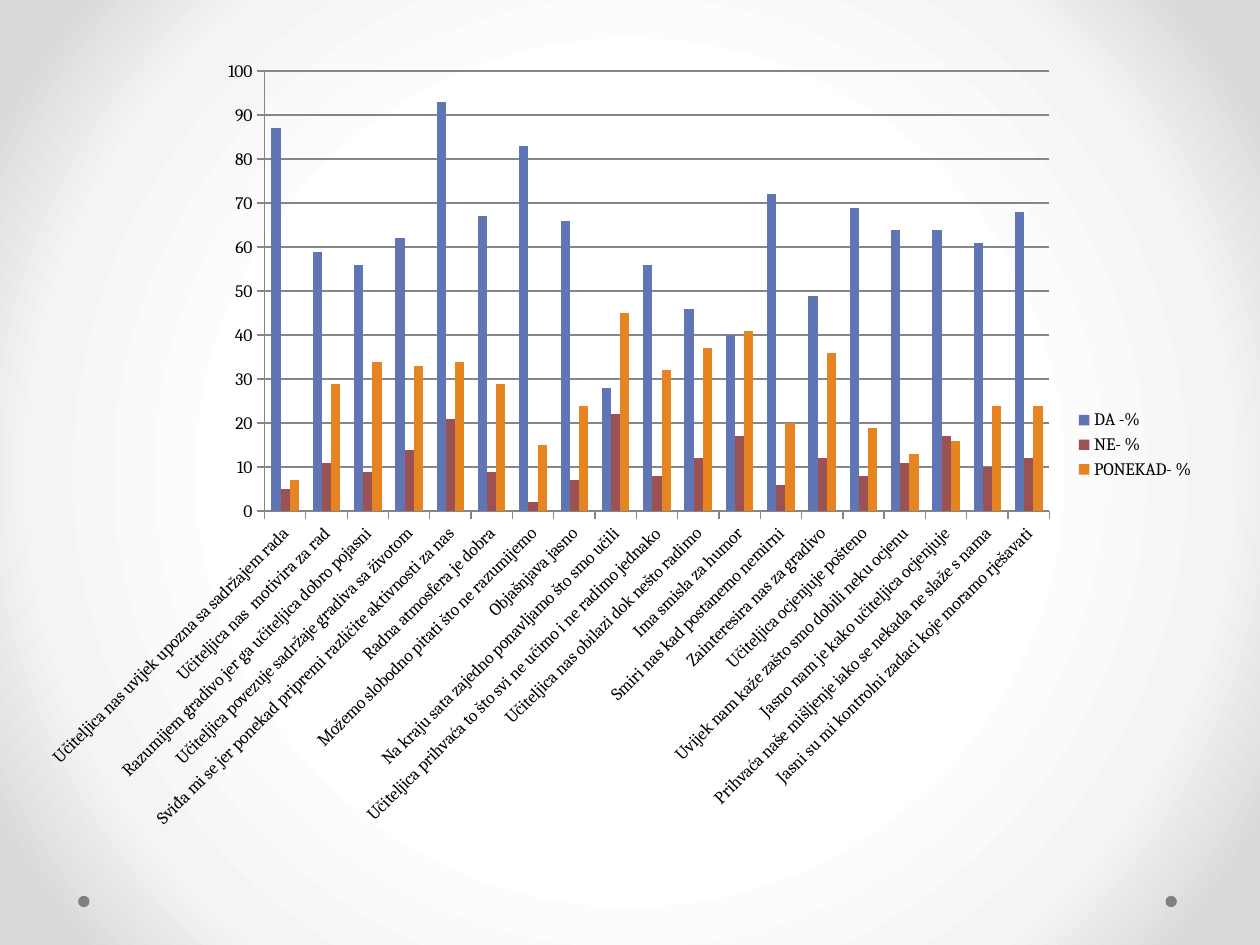
from lxml import etree
from pptx import Presentation
from pptx.chart import data
from pptx.dml import color
from pptx.enum import chart as kinds, shapes
from pptx.oxml import ns
from pptx.util import Inches, Pt

BACKGROUND_STOPS = [(50, "FFFFFF"), (76, "F4F4F4"), (92, "DADADA")]

ANSWERS = [
    ("Učiteljica nas uvijek upozna sa sadržajem rada", 87, 5, 7),
    ("Učiteljica nas  motivira za rad", 59, 11, 29),
    ("Razumijem gradivo jer ga učiteljica dobro pojasni", 56, 9, 34),
    ("Učiteljica povezuje sadržaje gradiva sa životom", 62, 14, 33),
    ("Sviđa mi se jer ponekad pripremi različite aktivnosti za nas", 93, 21, 34),
    ("Radna atmosfera je dobra", 67, 9, 29),
    ("Možemo slobodno pitati što ne razumijemo", 83, 2, 15),
    ("Objašnjava jasno", 66, 7, 24),
    ("Na kraju sata zajedno ponavljamo što smo učili", 28, 22, 45),
    ("Učiteljica prihvaća to što svi ne učimo i ne radimo jednako", 56, 8, 32),
    ("Učiteljica nas obilazi dok nešto radimo", 46, 12, 37),
    ("Ima smisla za humor", 40, 17, 41),
    ("Smiri nas kad postanemo nemirni", 72, 6, 20),
    ("Zainteresira nas za gradivo", 49, 12, 36),
    ("Učiteljica ocjenjuje pošteno", 69, 8, 19),
    ("Uvijek nam kaže zašto smo dobili neku ocjenu", 64, 11, 13),
    ("Jasno nam je kako učiteljica ocjenjuje", 64, 17, 16),
    ("Prihvaća naše mišljenje iako se nekada ne slaže s nama", 61, 10, 24),
    ("Jasni su mi kontrolni zadaci koje moramo rješavati", 68, 12, 24),
]
SERIES = [("DA -%", "6076B4"), ("NE- %", "9C5252"), ("PONEKAD- %", "E68422")]


def rgb(value):
    return color.RGBColor.from_string(value)


def style_font(font):
    font.name = "Cambria"
    font.size = Pt(10)
    font.color.rgb = rgb("000000")


def set_background(page):
    page.background.fill.solid()
    properties = page.element.find(".//" + ns.qn("p:bgPr"))
    stops = "".join(
        f'<a:gs pos="{place * 1000}"><a:srgbClr val="{value}"/></a:gs>'
        for place, value in BACKGROUND_STOPS
    )
    gradient = etree.fromstring(
        f'<a:gradFill {ns.nsdecls("a")} rotWithShape="1"><a:gsLst>{stops}</a:gsLst>'
        '<a:path path="circle"><a:fillToRect l="50000" t="50000" r="50000" b="50000"/>'
        "</a:path></a:gradFill>"
    )
    properties.replace(properties[0], gradient)


def add_dot(page, left):
    dot = page.shapes.add_shape(
        shapes.MSO_SHAPE.OVAL, Inches(left), Inches(7.11), Inches(0.09), Inches(0.09)
    )
    dot.shadow.inherit = False
    dot.fill.solid()
    dot.fill.fore_color.rgb = rgb("808080")
    dot.line.fill.background()


def style_axis(axis):
    style_font(axis.tick_labels.font)
    axis.major_tick_mark = kinds.XL_TICK_MARK.OUTSIDE
    axis.minor_tick_mark = kinds.XL_TICK_MARK.NONE
    axis.format.line.color.rgb = rgb("868686")


def add_answer_chart(page):
    table = data.CategoryChartData()
    labels, *columns = zip(*ANSWERS)
    table.categories = labels
    for (name, _), values in zip(SERIES, columns):
        table.add_series(name, values)
    chart = page.shapes.add_chart(
        kinds.XL_CHART_TYPE.COLUMN_CLUSTERED,
        Inches(0.2), Inches(0.36), Inches(9.38), Inches(6.34), table,
    ).chart
    style_font(chart.font)
    chart.has_title = False
    chart.has_legend = True
    chart.legend.position = kinds.XL_LEGEND_POSITION.RIGHT
    chart.legend.include_in_layout = False
    style_font(chart.legend.font)

    plot = chart.plots[0]
    plot.gap_width = 150
    plot.overlap = 0
    plot.vary_by_categories = False
    for series, (_, value) in zip(plot.series, SERIES):
        series.format.fill.solid()
        series.format.fill.fore_color.rgb = rgb(value)

    style_axis(chart.category_axis)
    style_axis(chart.value_axis)
    label_body = chart.category_axis._element.find(".//" + ns.qn("a:bodyPr"))
    label_body.set("rot", "-2700000")
    label_body.set("vert", "horz")
    chart.value_axis.minimum_scale = 0
    chart.value_axis.maximum_scale = 100
    chart.value_axis.major_unit = 10
    chart.value_axis.has_major_gridlines = True
    chart.value_axis.major_gridlines.format.line.color.rgb = rgb("868686")


def main():
    deck = Presentation()
    deck.slide_width, deck.slide_height = Inches(10), Inches(7.5)
    page = deck.slides.add_slide(deck.slide_layouts[6])
    set_background(page)
    for left in (9.25, 0.62):
        add_dot(page, left)
    add_answer_chart(page)
    deck.save("out.pptx")


if __name__ == "__main__":
    main()
